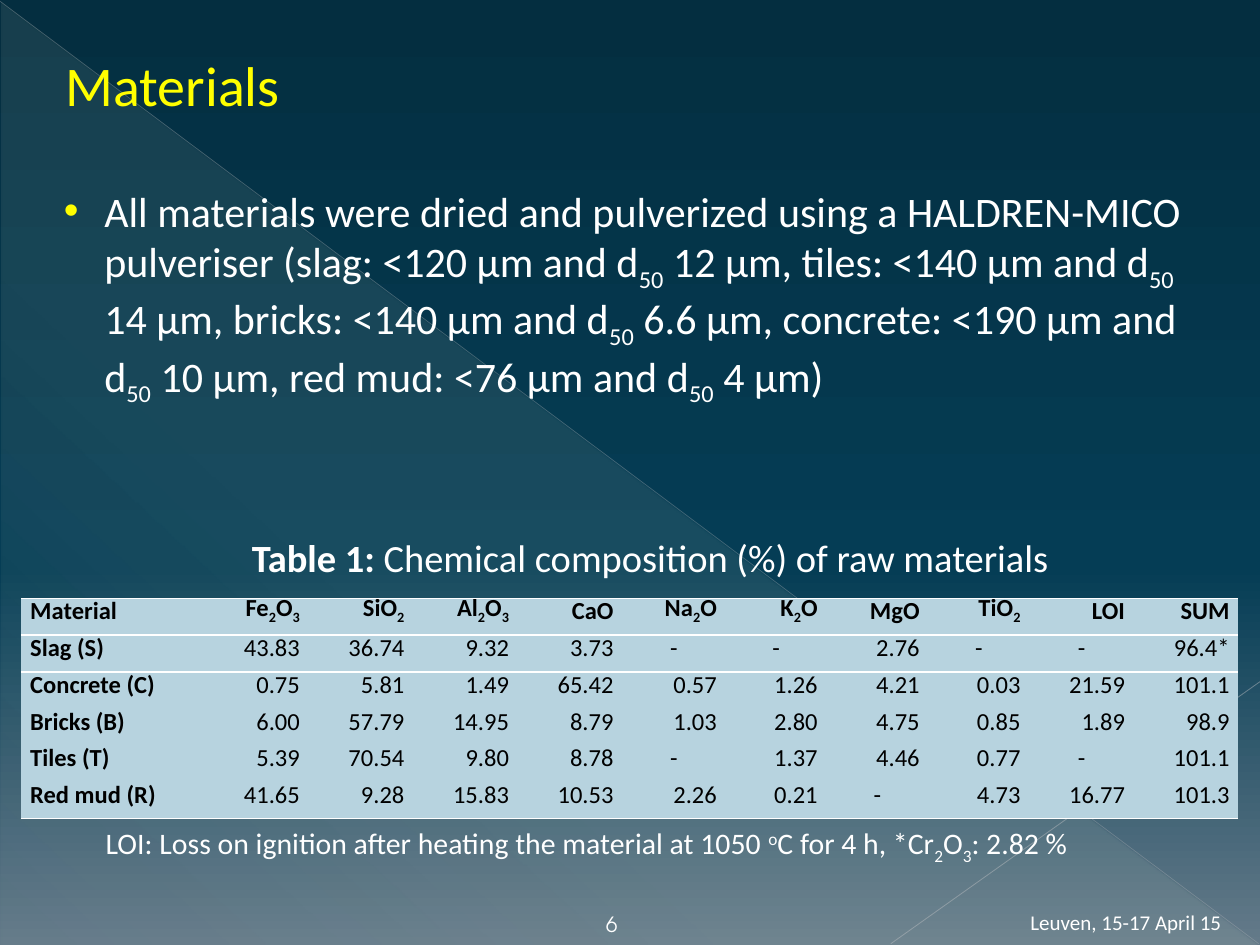
import pptx
import pptx.dml.color
import pptx.enum.shapes
import pptx.enum.text
import pptx.oxml
import pptx.oxml.ns
import pptx.util
from lxml import etree

Inches = pptx.util.Inches
Pt = pptx.util.Pt
qn = pptx.oxml.ns.qn
ALIGN = pptx.enum.text.PP_ALIGN
ANCHOR = pptx.enum.text.MSO_ANCHOR
COLORS = {
    "night": "042E40", "sea": "053D55", "haze": "647A89", "beam": "DFE6D0",
    "long_edge": "B3B7BA", "short_edge": "BCBFC2", "white": "FFFFFF",
    "yellow": "FFFF00", "outline": "516B72", "cell": "B7D3DF", "black": "000000",
}
BASELINES = {"_": "-25000", "^": "30000"}


def write_text(frame, text, size=14, color="white", bold=False, font="Calibri",
               align=ALIGN.LEFT, anchor=ANCHOR.TOP, indent=(0, 0),
               before=None, after=None, spacing=None):
    """Split text at "|"; a part led by _ is subscript, ^ superscript, ! bold."""
    frame.word_wrap = True
    frame.vertical_anchor = anchor
    para = frame.paragraphs[0]
    para.alignment = align
    para.space_before = before
    para.space_after = after
    para.line_spacing = spacing
    properties = para._p.get_or_add_pPr()
    properties.set("marL", str(Inches(indent[0])))
    properties.set("indent", str(Inches(indent[1])))
    for part in text.split("|"):
        span = para.add_run()
        span.text = part.lstrip("_^!")
        span.font.name = font
        span.font.size = Pt(size)
        span.font.bold = bold or part.startswith("!")
        span.font.color.rgb = pptx.dml.color.RGBColor.from_string(COLORS[color])
        if part[0] in BASELINES:
            span._r.get_or_add_rPr().set("baseline", BASELINES[part[0]])
    return para


def set_gradient(fill, owner, angle, stops):
    fill.gradient()
    fill.gradient_angle = 360 - angle
    stop_list = next(owner.iter(qn("a:gsLst")))
    for stop in list(stop_list):
        stop_list.remove(stop)
    for position, color, opacity in stops:
        stop = etree.SubElement(stop_list, qn("a:gs"), pos=str(position * 1000))
        tone = etree.SubElement(stop, qn("a:srgbClr"), val=COLORS[color])
        etree.SubElement(tone, qn("a:alpha"), val=str(opacity * 1000))


deck = pptx.Presentation()
deck.slide_width = Inches(10)
deck.slide_height = Inches(7.5)
page = deck.slides.add_slide(deck.slide_layouts[5])
set_gradient(page.background.fill, page._element, 90,
             [(0, "night", 100), (60, "sea", 100), (100, "haze", 100)])

beam = page.shapes.add_shape(pptx.enum.shapes.MSO_SHAPE.RIGHT_TRIANGLE,
                             Inches(0.01), Inches(0.02), Inches(9.98), Inches(7.48))
beam.shadow.inherit = False
beam.line.fill.background()
set_gradient(beam.fill, beam._element, 133,
             [(0, "beam", 10), (70, "beam", 8), (100, "beam", 1)])

for ends, color, width, opacity in [
    ((0, 0.01, 9.99, 7.49), "long_edge", 0.39, 35),
    ((10, 5.41, 7.07, 7.49), "short_edge", 0.47, 45),
]:
    edge = page.shapes.add_connector(pptx.enum.shapes.MSO_CONNECTOR.STRAIGHT,
                                     *[Inches(value) for value in ends])
    edge.line.width = Pt(width)
    edge.line.color.rgb = pptx.dml.color.RGBColor.from_string(COLORS[color])
    tone = next(edge._element.iter(qn("a:srgbClr")))
    etree.SubElement(tone, qn("a:alpha"), val=str(opacity * 1000))
    etree.SubElement(edge._element.spPr, qn("a:effectLst"))

title = page.shapes.title
page.shapes._spTree.append(title._element)
title.left, title.top = Inches(0.33), Inches(0.25)
title.width, title.height = Inches(9.42), Inches(0.83)
heading = write_text(title.text_frame, "Materials", size=32, color="yellow",
                     anchor=ANCHOR.MIDDLE, indent=(0.53, -0.44))
outline = etree.Element(qn("a:ln"), w=str(Pt(0.5)))
outline_fill = etree.SubElement(outline, qn("a:solidFill"))
etree.SubElement(outline_fill, qn("a:srgbClr"), val=COLORS["outline"])
heading.runs[0]._r.get_or_add_rPr().insert(0, outline)

note_format = {"indent": (0.07, 0), "before": Pt(9), "after": Pt(12)}
paragraphs = {}
for name, place, text, style in [
    ("date", (8.08, 7.17, 1.75, 0.33), "Leuven, 15-17 April 15", {"size": 12}),
    ("body", (0.33, 1.42, 9.33, 2.08),
     "All materials were dried and pulverized using a HALDREN-MICO pulveriser "
     "(slag: <120 μm and d|_50| 12 μm, tiles: <140 μm and d|_50| 14 μm, "
     "bricks: <140 μm and d|_50| 6.6 μm, concrete: <190 μm and d|_50| 10 μm, "
     "red mud: <76 μm and d|_50| 4 μm)",
     {"size": 24, "indent": (0.4, -0.32), "before": Pt(9)}),
    ("number", (4.58, 7.15, 0.55, 0.33), "6",
     {"size": 12, "font": "TeX Gyre Adventor", "align": ALIGN.CENTER,
      "anchor": ANCHOR.BOTTOM}),
    ("caption", (1.83, 4.19, 7.5, 0.5),
     "!Table 1:| Chemical composition (%) of raw materials",
     {"size": 22, **note_format}),
    ("footnote", (0.67, 6.5, 8.83, 0.5),
     "LOI: Loss on ignition after heating the material at 1050 |^o|C for 4 h, "
     "*Cr|_2|O|_3|: 2.82 %", {"size": 17, **note_format}),
]:
    box = page.shapes.add_textbox(*[Inches(value) for value in place])
    paragraphs[name] = write_text(box.text_frame, text, **style)

bullet_properties = paragraphs["body"]._p.get_or_add_pPr()
bullet_color = etree.SubElement(bullet_properties, qn("a:buClr"))
etree.SubElement(bullet_color, qn("a:srgbClr"), val=COLORS["yellow"])
etree.SubElement(bullet_properties, qn("a:buFont"), typeface="Arial")
etree.SubElement(bullet_properties, qn("a:buChar"), char="•")

composition = [
    ["Material", "Fe|_2|O|_3", "SiO|_2", "Al|_2|O|_3", "CaO", "Na|_2|O", "K|_2|O",
     "MgO", "TiO|_2", "LOI", "SUM"],
    ["Slag (S)", "43.83", "36.74", "9.32", "3.73", "-", "-", "2.76", "-", "-", "96.4*"],
    ["Concrete (C)", "0.75", "5.81", "1.49", "65.42", "0.57", "1.26", "4.21", "0.03",
     "21.59", "101.1"],
    ["Bricks (B)", "6.00", "57.79", "14.95", "8.79", "1.03", "2.80", "4.75", "0.85",
     "1.89", "98.9"],
    ["Tiles (T)", "5.39", "70.54", "9.80", "8.78", "-", "1.37", "4.46", "0.77", "-",
     "101.1"],
    ["Red mud (R)", "41.65", "9.28", "15.83", "10.53", "2.26", "0.21", "-", "4.73",
     "16.77", "101.3"],
]
column_widths = [1.49, 0.79, 0.83, 0.83, 0.83, 0.82, 0.8, 0.81, 0.8, 0.83, 0.83]
borders = {0: ["lnT", "lnB"], 1: ["lnT"], len(composition) - 1: ["lnB"]}
table = page.shapes.add_table(len(composition), len(column_widths), Inches(0.17),
                              Inches(4.75), Inches(9.67), Inches(1.75)).table
next(table._tbl.iter(qn("a:tableStyleId"))).text = "{2D5ABB26-0587-4C30-8999-92F81FD0307C}"
table.horz_banding = False
for column, width in zip(table.columns, column_widths):
    column.width = Inches(width)

for row, values in enumerate(composition):
    for column, value in enumerate(values):
        cell = table.cell(row, column)
        cell.margin_left = cell.margin_right = Inches(0.07)
        cell.margin_top = cell.margin_bottom = 0
        cell.fill.solid()
        cell.fill.fore_color.rgb = pptx.dml.color.RGBColor.from_string(COLORS["cell"])
        if column == 0:
            align = ALIGN.LEFT
        else:
            align = ALIGN.CENTER if value == "-" else ALIGN.RIGHT
        write_text(cell.text_frame, value, color="black", bold=row == 0 or column == 0,
                   align=align, spacing=Pt(16))
        for position, side in enumerate(borders.get(row, [])):
            border = etree.Element(qn("a:" + side), w=str(Pt(1)))
            border_fill = etree.SubElement(border, qn("a:solidFill"))
            etree.SubElement(border_fill, qn("a:srgbClr"), val=COLORS["white"])
            cell._tc.get_or_add_tcPr().insert(position, border)

deck.save("out.pptx")
